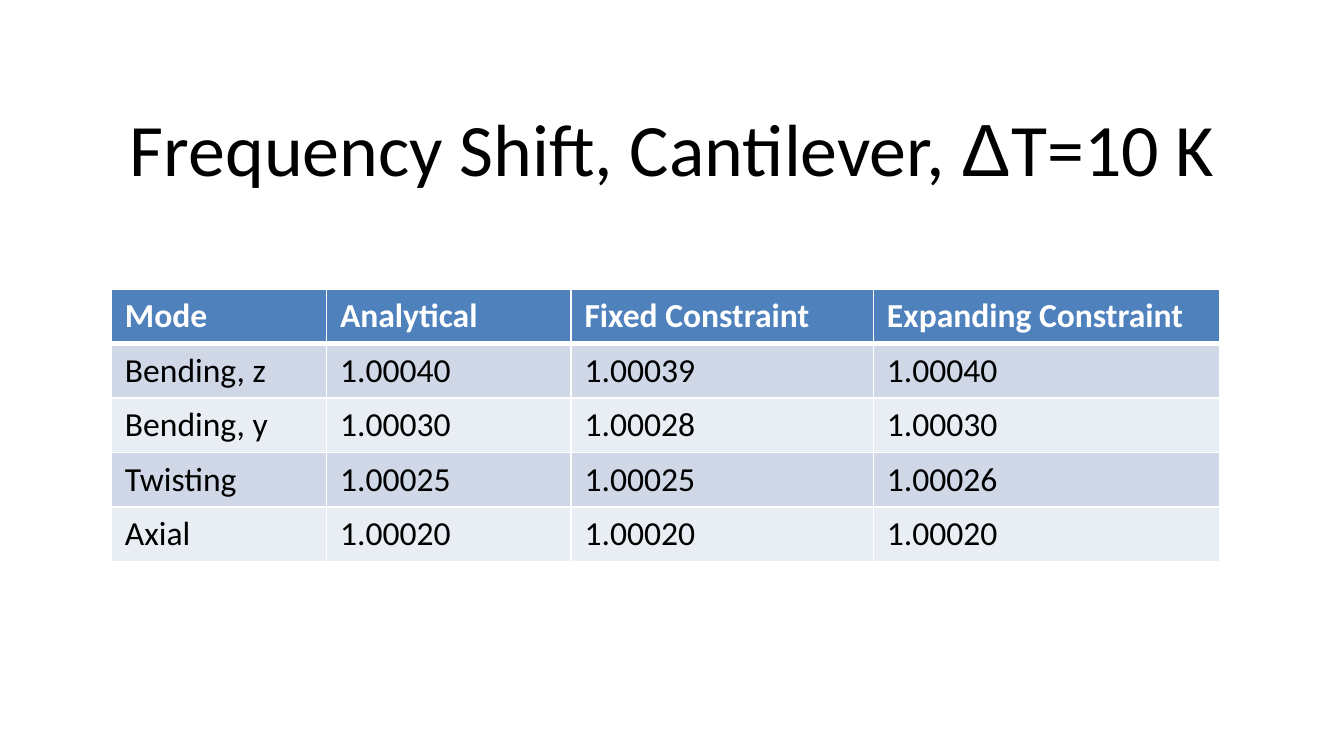
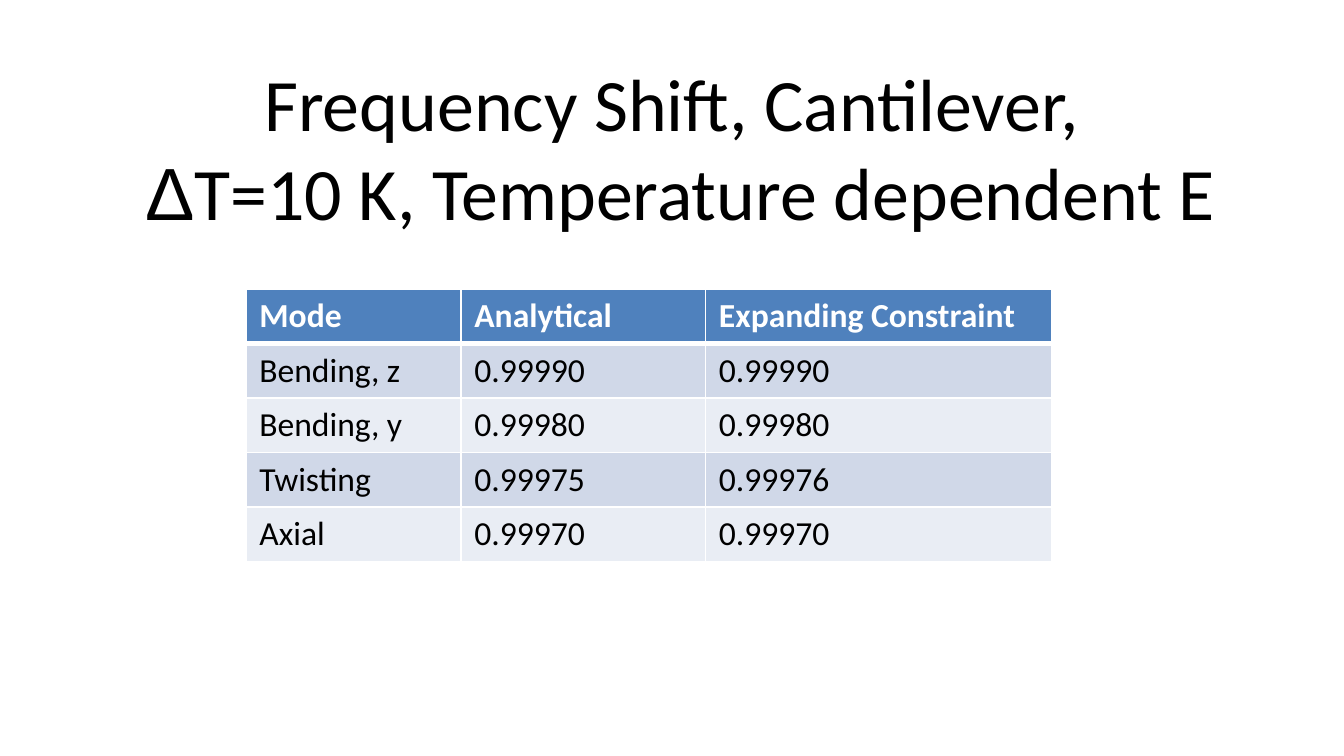
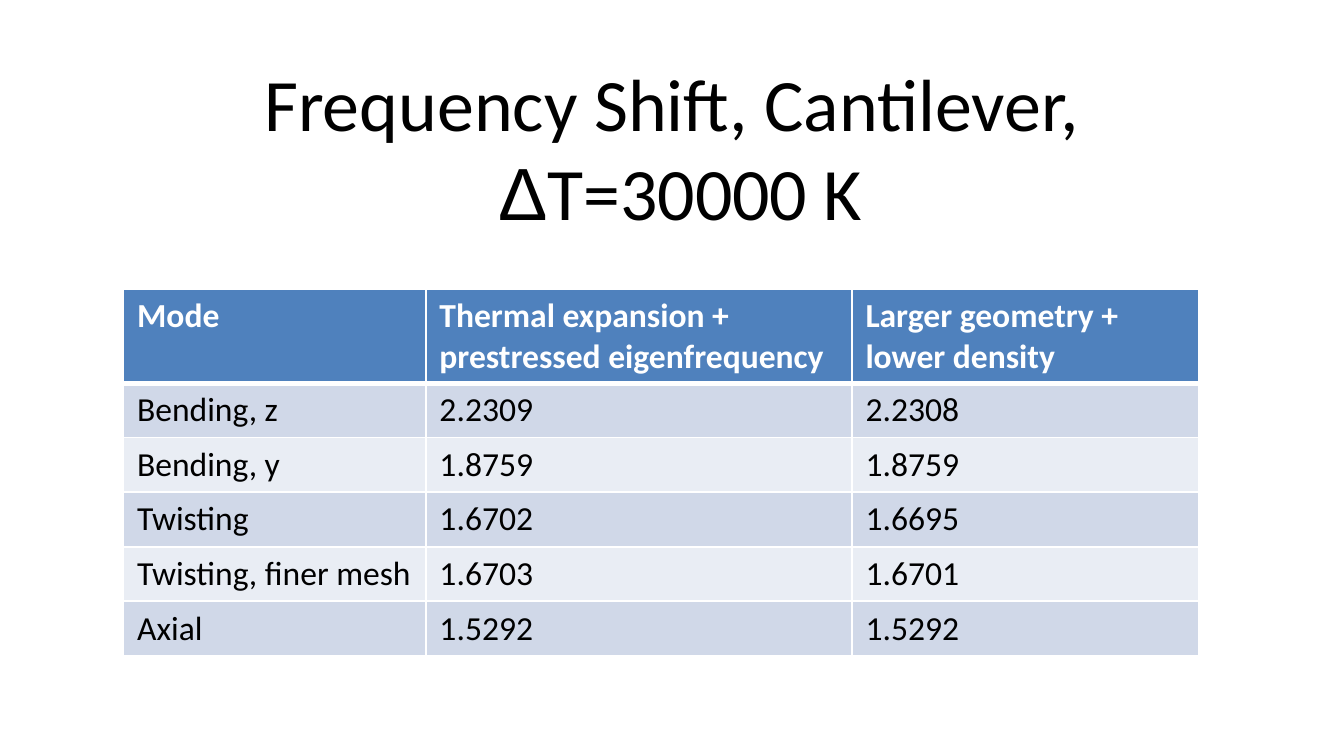
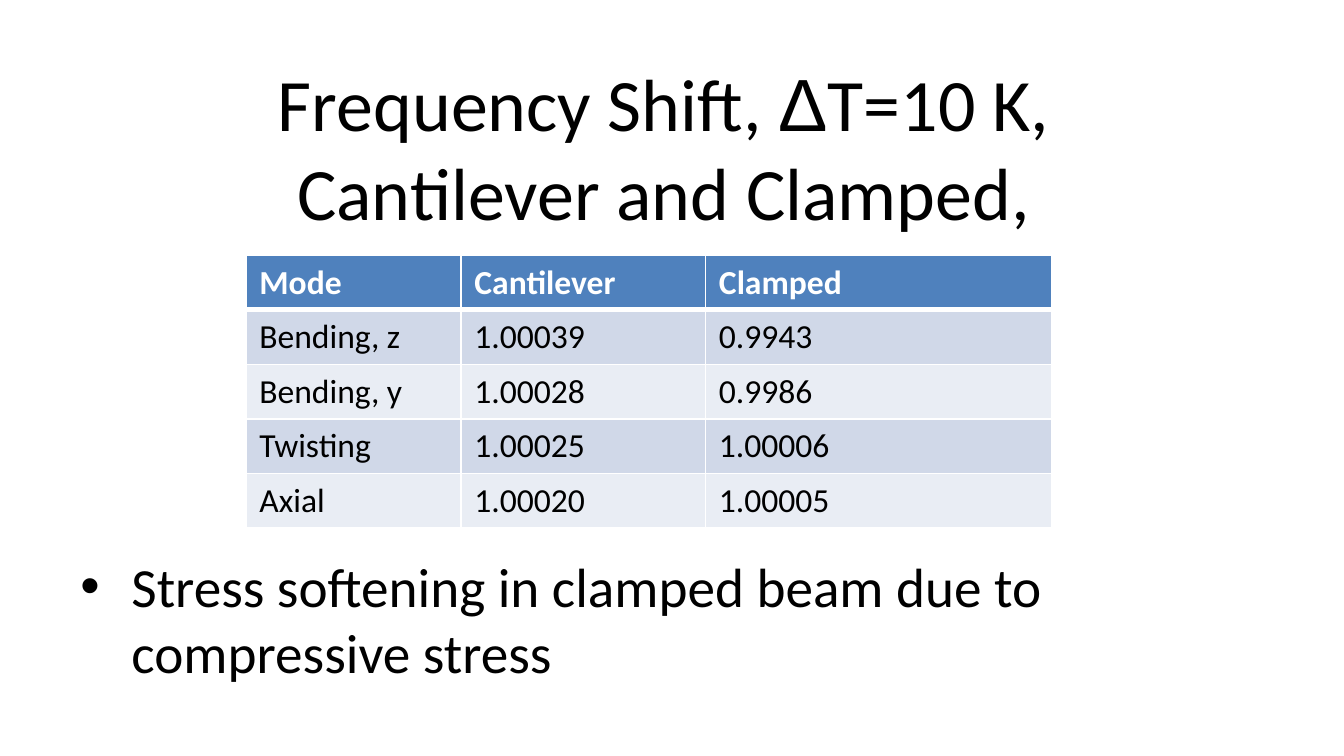
from lxml.etree import SubElement
from pptx import Presentation
from pptx.dml.color import RGBColor
from pptx.enum.text import MSO_ANCHOR, PP_ALIGN
from pptx.oxml.ns import qn
from pptx.util import Inches, Pt

COLORS = {
    "text": "000000",
    "header_text": "FFFFFF",
    "header": "4F81BD",
    "band_dark": "D0D8E8",
    "band_light": "E9EDF4",
    "grid": "FFFFFF",
}
BODY_FONT = "Calibri"
SYMBOL_FONT = "Arial"
ROW_HEIGHT = 2.03 / 5
TALL_HEADER = 0.7
MODE_COLUMNS = (1.6, 1.82, 2.58)


def color(name):
    return RGBColor.from_string(COLORS[name])


def add_run(paragraph, text, size, font=BODY_FONT, color_name="text", bold=False):
    run = paragraph.add_run()
    run.text = text
    run.font.name = font
    run.font.size = Pt(size)
    run.font.bold = bold
    run.font.color.rgb = color(color_name)


def add_text_frame(slide, left, top, width, height):
    frame = slide.shapes.add_textbox(
        Inches(left), Inches(top), Inches(width), Inches(height)).text_frame
    frame.word_wrap = True
    return frame


def add_title(slide, title):
    """Centre the title, setting each Δ in the symbol font."""
    frame = add_text_frame(slide, 0.5, 0.62, 9, 0.94)
    frame.vertical_anchor = MSO_ANCHOR.MIDDLE
    paragraph = frame.paragraphs[0]
    paragraph.alignment = PP_ALIGN.CENTER
    for number, line in enumerate(title.split("\n")):
        if number:
            paragraph.add_line_break()
        for part in line.partition("Δ"):
            if part:
                add_run(paragraph, part, 39.6, SYMBOL_FONT if part == "Δ" else BODY_FONT)


def add_bullet(slide, text):
    paragraph = add_text_frame(slide, 0.5, 4.06, 9, 1).paragraphs[0]
    properties = paragraph._p.get_or_add_pPr()
    properties.set("marL", str(Inches(0.38)))
    properties.set("indent", str(-Inches(0.38)))
    SubElement(properties, qn("a:buFont"), typeface=SYMBOL_FONT)
    SubElement(properties, qn("a:buChar"), char="•")
    add_run(paragraph, text, 29.6)


def add_borders(cell, top, bottom):
    """Draw grid lines; top and bottom are widths in points."""
    properties = cell._tc.get_or_add_tcPr()
    for side, width in (("L", 1), ("R", 1), ("T", top), ("B", bottom)):
        line = SubElement(properties, qn(f"a:ln{side}"), w=str(Pt(width)))
        fill = SubElement(line, qn("a:solidFill"))
        SubElement(fill, qn("a:srgbClr"), val=COLORS["grid"])


def add_frequency_table(slide, left, top, widths, rows, header_height=ROW_HEIGHT):
    heights = [header_height] + [ROW_HEIGHT] * (len(rows) - 1)
    table = slide.shapes.add_table(
        len(rows), len(widths), Inches(left), Inches(top),
        Inches(sum(widths)), Inches(sum(heights))).table
    for column, width in zip(table.columns, widths):
        column.width = Inches(width)
    for r, (values, height) in enumerate(zip(rows, heights)):
        table.rows[r].height = Inches(height)
        is_header = r == 0
        band = "header" if is_header else "band_dark" if r % 2 else "band_light"
        for c, value in enumerate(values):
            cell = table.cell(r, c)
            add_borders(cell, 3 if r == 1 else 1, 3 if is_header else 1)
            cell.fill.solid()
            cell.fill.fore_color.rgb = color(band)
            add_run(cell.text_frame.paragraphs[0], value, 18,
                    color_name="header_text" if is_header else "text", bold=is_header)


def main():
    deck = Presentation()
    deck.slide_width = Inches(10)
    deck.slide_height = deck.slide_width * 9 // 16

    def new_slide(title):
        slide = deck.slides.add_slide(deck.slide_layouts[6])
        add_title(slide, title)
        return slide

    slide = new_slide("Frequency Shift, Cantilever, ΔT=10 K")
    add_frequency_table(slide, 0.83, 2.15, (1.6, 1.82, 2.25, 2.58), [
        ("Mode", "Analytical", "Fixed Constraint", "Expanding Constraint"),
        ("Bending, z", "1.00040", "1.00039", "1.00040"),
        ("Bending, y", "1.00030", "1.00028", "1.00030"),
        ("Twisting", "1.00025", "1.00025", "1.00026"),
        ("Axial", "1.00020", "1.00020", "1.00020"),
    ])

    slide = new_slide("Frequency Shift, Cantilever,\n ΔT=10 K, Temperature dependent E")
    add_frequency_table(slide, 1.83, 2.15, MODE_COLUMNS, [
        ("Mode", "Analytical", "Expanding Constraint"),
        ("Bending, z", "0.99990", "0.99990"),
        ("Bending, y", "0.99980", "0.99980"),
        ("Twisting", "0.99975", "0.99976"),
        ("Axial", "0.99970", "0.99970"),
    ])

    slide = new_slide("Frequency Shift, Cantilever,\n ΔT=30000 K")
    add_frequency_table(slide, 0.92, 2.15, (2.25, 3.17, 2.58), [
        ("Mode", "Thermal expansion + prestressed eigenfrequency",
         "Larger geometry + lower density"),
        ("Bending, z", "2.2309", "2.2308"),
        ("Bending, y", "1.8759", "1.8759"),
        ("Twisting", "1.6702", "1.6695"),
        ("Twisting, finer mesh", "1.6703", "1.6701"),
        ("Axial", "1.5292", "1.5292"),
    ], TALL_HEADER)

    slide = new_slide("Frequency Shift, ΔT=10 K, \nCantilever and Clamped, ")
    add_frequency_table(slide, 1.83, 1.9, MODE_COLUMNS, [
        ("Mode", "Cantilever", "Clamped"),
        ("Bending, z", "1.00039", "0.9943"),
        ("Bending, y", "1.00028", "0.9986"),
        ("Twisting", "1.00025", "1.00006"),
        ("Axial", "1.00020", "1.00005"),
    ])
    add_bullet(slide, "Stress softening in clamped beam due to compressive stress")

    deck.save("out.pptx")


if __name__ == "__main__":
    main()
